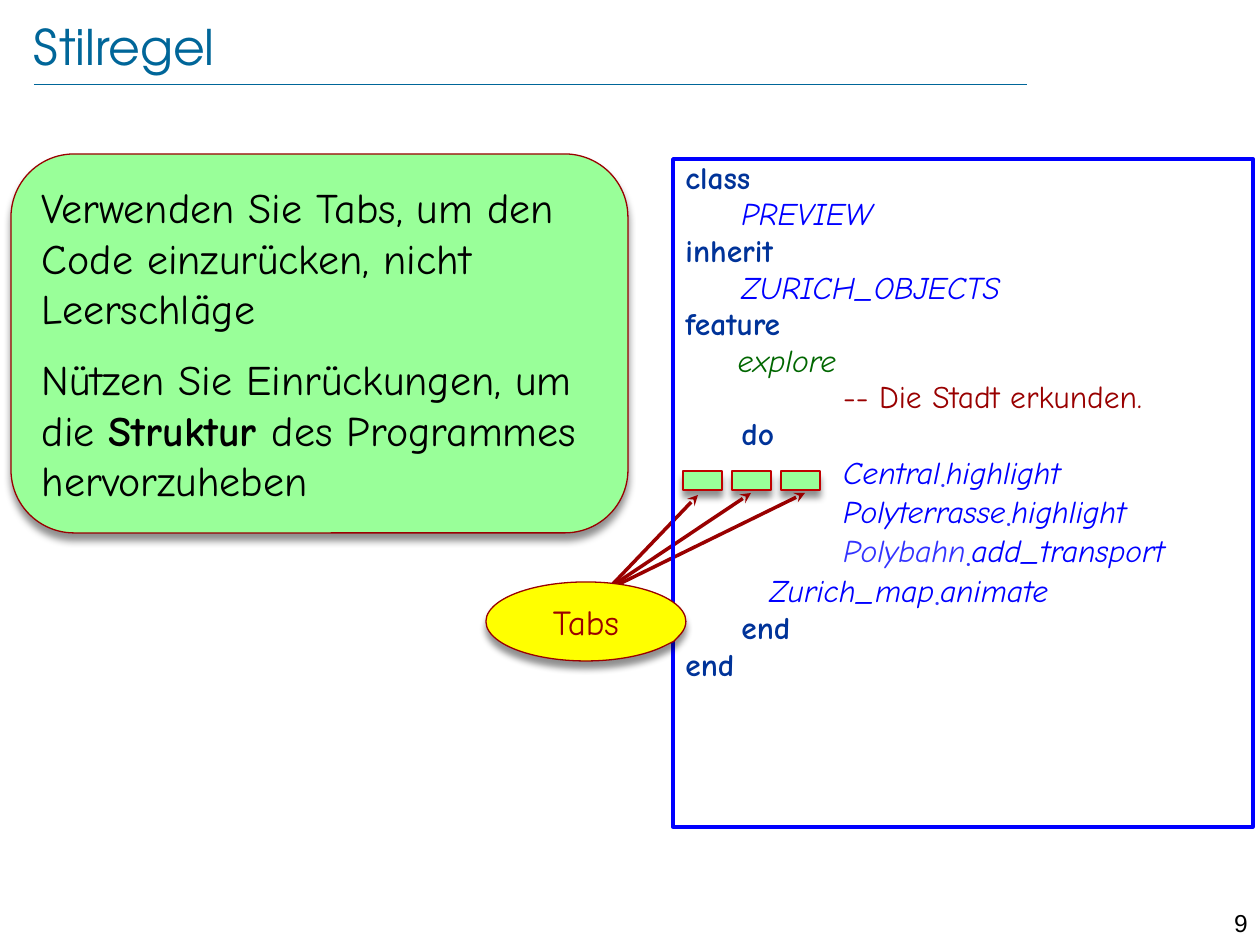
from lxml import etree
from pptx import Presentation
from pptx.dml.color import RGBColor
from pptx.enum.shapes import MSO_CONNECTOR, MSO_SHAPE
from pptx.enum.text import MSO_ANCHOR, PP_ALIGN
from pptx.oxml.ns import qn
from pptx.util import Pt

LINE = MSO_CONNECTOR.STRAIGHT
RECT, ROUND = MSO_SHAPE.RECTANGLE, MSO_SHAPE.ROUNDED_RECTANGLE
CALL = MSO_SHAPE.OVAL_CALLOUT
TOP, MID = MSO_ANCHOR.TOP, MSO_ANCHOR.MIDDLE
LEFT, MITTE, RIGHT = PP_ALIGN.LEFT, PP_ALIGN.CENTER, PP_ALIGN.RIGHT

TEAL = RGBColor(0x00, 0x66, 0x99)
BLACK = RGBColor(0x00, 0x00, 0x00)
MINT = RGBColor(0x99, 0xFF, 0x99)
YELLOW = RGBColor(0xFF, 0xFF, 0x00)
MAROON = RGBColor(0x99, 0x00, 0x00)
RED = RGBColor(0xC0, 0x00, 0x00)
NAVY = RGBColor(0x00, 0x33, 0x99)
BLUE = RGBColor(0x00, 0x00, 0xFF)
PALE = RGBColor(0x33, 0x33, 0xFF)
GREEN = RGBColor(0x00, 0x66, 0x00)

HEAD, HAND, SANS = "TeX Gyre Adventor", "Comic Neue", "Arial"

# Run styles: colour, bold, italic, baseline shift in percent
TEXT = (BLACK, False, False, 0)
BOLD = (BLACK, True, False, 0)
TAG = (MAROON, False, False, 0)
KEY = (NAVY, True, False, 0)
NAME = (BLUE, False, True, 0)
SOFT = (PALE, False, True, 0)
FEAT = (GREEN, False, True, 0)
PAD = (PALE, False, False, 0)
DOT = (PALE, False, False, -20)

# Content
TITLE = "Stilregel"
NUMBER = "9"
RULES = [
    [("Verwenden Sie Tabs, um den Code einzurücken, nicht Leerschläge", TEXT)],
    [("Nützen Sie Einrückungen, um die ", TEXT), ("Struktur ", BOLD),
     ("des Programmes hervorzuheben", TEXT)],
]
ONE, THREE = " " * 5, " " * 15
CODE = [
    [("class", KEY)],
    [(ONE, KEY), ("PREVIEW", NAME)],
    [("inherit", KEY)],
    [(ONE, KEY), ("ZURICH_OBJECTS", NAME)],
    [("feature", KEY)],
    [(ONE + "explore", FEAT)],
    [(THREE + "-- Die Stadt erkunden.", TAG)],
    [(ONE + "do", KEY)],
    [(THREE, PAD), ("Central", NAME), ("•", DOT), ("highlight", NAME)],
    [(THREE, PAD), ("Polyterrasse", NAME), ("•", DOT), ("highlight", NAME)],
    [(THREE, PAD), ("Polybahn", SOFT), ("•", DOT), ("add_transport", NAME)],
    [("\t  Zurich_map", NAME), ("•", DOT), ("animate", NAME)],
    [(ONE + "end", KEY)],
    [("end", KEY)],
]
LABEL = [[("Tabs", TAG)]]

# Places in px
RULE_BOX = (11, 154, 617, 379)
CODE_BOX = (673, 159, 580, 668)
TAB_BOX = (683, 471, 39, 19)
TAB_STEP = 49
CALL_BOX = (486, 582, 200, 79)
ARROWS = [(609, 588, 698, 495), (607, 590, 805, 493), (606, 590, 751, 493)]


def px(*vals):
    return [round(v * 914400 / 126) for v in vals]


def write(frame, paras, size, font, align=LEFT, anchor=TOP, gap=0, lines=None):
    frame.word_wrap = True
    frame.vertical_anchor = anchor
    for i, runs in enumerate(paras):
        para = frame.paragraphs[0] if i == 0 else frame.add_paragraph()
        para.alignment = align
        para.space_before = Pt(gap if i else 0)
        if lines:
            para.line_spacing = lines
        for text, (color, bold, slant, shift) in runs:
            run = para.add_run()
            run.text = text
            run.font.name, run.font.size = font, Pt(size)
            run.font.bold, run.font.italic = bold, slant
            run.font.color.rgb = color
            if shift:
                run._r.get_or_add_rPr().set("baseline", str(shift * 1000))


def shade(shape):
    effects = shape._element.spPr.find(qn("a:effectLst"))
    glow = etree.SubElement(effects, qn("a:outerShdw"), blurRad=str(Pt(4)),
                            dist=str(Pt(4)), dir="5400000", rotWithShape="0")
    tint = etree.SubElement(glow, qn("a:srgbClr"), val="000000")
    etree.SubElement(tint, qn("a:alpha"), val="43000")


def add_box(slide, kind, place, fill, edge, width):
    shape = slide.shapes.add_shape(kind, *px(*place))
    shape.shadow.inherit = False
    shape.line.color.rgb, shape.line.width = edge, Pt(width)
    if fill is None:
        shape.fill.background()
    else:
        shape.fill.solid()
        shape.fill.fore_color.rgb = fill
        shade(shape)
    return shape


def add_line(slide, ends, color, width, arrow=False):
    line = slide.shapes.add_connector(LINE, *px(*ends))
    line.line.color.rgb, line.line.width = color, Pt(width)
    if arrow:
        etree.SubElement(line.line._get_or_add_ln(), qn("a:tailEnd"), type="stealth")
    etree.SubElement(line._element.spPr, qn("a:effectLst"))


def main():
    deck = Presentation()
    deck.slide_width, deck.slide_height = px(1260, 945)
    slide = deck.slides.add_slide(deck.slide_layouts[5])

    # Title, rule below it and page number
    title = slide.shapes.title
    title.left, title.top, title.width, title.height = px(34, 16, 1095, 60)
    frame = title.text_frame
    frame.margin_left = frame.margin_top = 0
    frame.margin_right = frame.margin_bottom = 0
    write(frame, [[(TITLE, (TEAL, False, False, 0))]], 28, HEAD, anchor=MID)
    add_line(slide, (34, 84, 1027, 84), TEAL, 0.25)
    page = slide.shapes.add_textbox(*px(1191, 902, 69, 30))
    write(page.text_frame, [[(NUMBER, TEXT)]], 14, SANS, RIGHT)

    # Style rules
    rules = add_box(slide, ROUND, RULE_BOX, MINT, MAROON, 0.75)
    write(rules.text_frame, RULES, 24, HAND, anchor=MID, gap=12)

    # Tab marks and the arrows to them
    left, *rest = TAB_BOX
    for i in range(3):
        add_box(slide, RECT, (left + i * TAB_STEP, *rest), MINT, RED, 0.75)
    for ends in ARROWS:
        add_line(slide, ends, MAROON, 2, arrow=True)

    # Code listing
    code = add_box(slide, RECT, CODE_BOX, None, BLUE, 2)
    write(code.text_frame, CODE, 18, HAND, gap=3.6, lines=0.8)

    # Callout
    call = add_box(slide, CALL, CALL_BOX, YELLOW, MAROON, 0.75)
    call.adjustments[0], call.adjustments[1] = 0.44, 0.25
    write(call.text_frame, LABEL, 20, HAND, MITTE, MID)

    deck.save("out.pptx")


if __name__ == "__main__":
    main()
